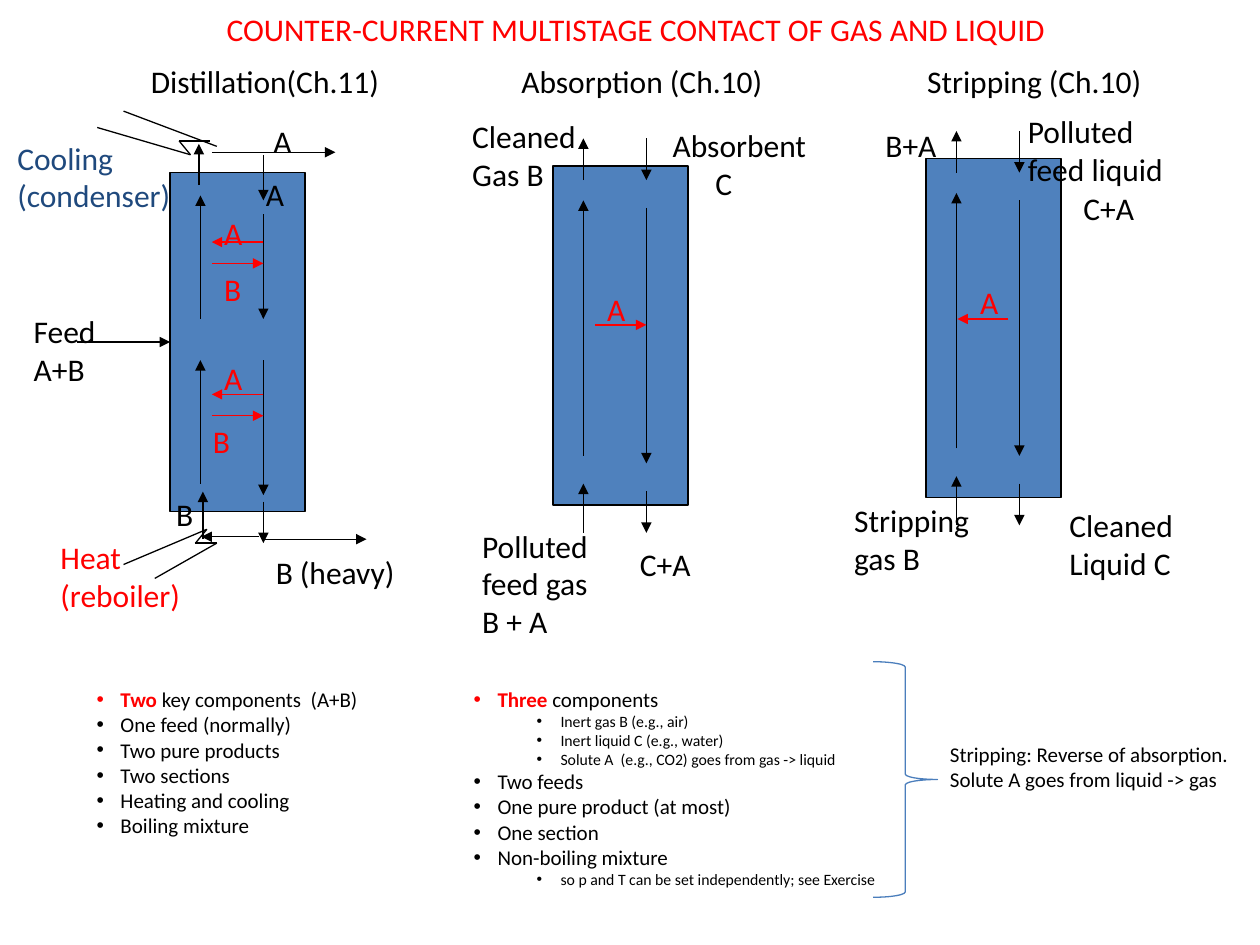
from dataclasses import dataclass

from lxml.etree import SubElement
from pptx import Presentation
from pptx.dml.color import RGBColor
from pptx.enum.shapes import MSO_CONNECTOR as Link, MSO_SHAPE as Preset
from pptx.enum.text import MSO_AUTO_SIZE as Fit
from pptx.oxml.ns import qn
from pptx.util import Cm, Pt


@dataclass(frozen=True)
class Theme:
    font: str = "Calibri"
    black: str = "000000"
    red: str = "FF0000"
    navy: str = "1F497D"
    column: str = "4F81BD"
    brace: str = "4B7EBC"
    label: int = 18
    note: int = 12
    detail: int = 9
    stroke: float = 0.75


THEME = Theme()
COLUMN_WIDTH, COLUMN_HEIGHT = 2.72, 6.83


class FlowPage:
    def __init__(self, page, theme):
        self.page = page
        self.theme = theme

    def span(self, para, text, size, color, bold=False):
        run = para.add_run()
        run.text = text
        run.font.name = self.theme.font
        run.font.size = Pt(size)
        run.font.bold = bold
        run.font.color.rgb = RGBColor.from_string(color)

    def frame(self, left, top, width, height):
        box = self.page.shapes.add_textbox(Cm(left), Cm(top), Cm(width), Cm(height))
        box.text_frame.word_wrap = False
        box.text_frame.auto_size = Fit.SHAPE_TO_FIT_TEXT
        return box.text_frame

    def paragraphs(self, frame, items):
        """Yield each item with its paragraph, using the frame's first one first."""
        for index, item in enumerate(items):
            yield item, frame.add_paragraph() if index else frame.paragraphs[0]

    def label(self, left, top, width, text, color=THEME.black, size=THEME.label, indent=0):
        """Place lines of text; indent moves the last line to the right."""
        lines = text.split("\n")
        line_height = 0.78 * size / self.theme.label
        frame = self.frame(left, top, width, 0.24 + line_height * len(lines))
        for line, para in self.paragraphs(frame, lines):
            self.span(para, line, size, color)
        if indent:
            para._p.get_or_add_pPr().set("marL", str(Cm(indent)))

    def bullets(self, left, top, width, height, items):
        """Each item is (level, red bold lead, text)."""
        frame = self.frame(left, top, width, height)
        for (level, lead, text), para in self.paragraphs(frame, items):
            para.level = level
            props = para._p.get_or_add_pPr()
            props.set("marL", str(Cm(0.48 + 1.27 * level)))
            props.set("indent", str(Cm(-0.48)))
            SubElement(props, qn("a:buFont")).set("typeface", "Arial")
            SubElement(props, qn("a:buChar")).set("char", "•")
            if lead:
                self.span(para, lead, self.theme.note, self.theme.red, bold=True)
            size = self.theme.detail if level else self.theme.note
            self.span(para, text, size, self.theme.black)

    def shape(self, preset, left, top, width, height, line, fill=None):
        shape = self.page.shapes.add_shape(preset, Cm(left), Cm(top), Cm(width), Cm(height))
        shape.shadow.inherit = False
        shape.line.color.rgb = RGBColor.from_string(line)
        shape.line.width = Pt(self.theme.stroke)
        if fill:
            shape.fill.solid()
            shape.fill.fore_color.rgb = RGBColor.from_string(fill)
        else:
            shape.fill.background()
        return shape

    def column(self, left, top):
        return self.shape(Preset.RECTANGLE, left, top, COLUMN_WIDTH, COLUMN_HEIGHT,
                          self.theme.black, self.theme.column)

    def line(self, x1, y1, x2, y2, color=THEME.black, owner=None):
        line = (owner or self.page).shapes.add_connector(
            Link.STRAIGHT, Cm(x1), Cm(y1), Cm(x2), Cm(y2))
        line.line.color.rgb = RGBColor.from_string(color)
        line.line.width = Pt(self.theme.stroke)
        SubElement(line._element.spPr, qn("a:effectLst"))
        return line

    def arrow(self, x1, y1, x2, y2, color=THEME.black):
        arrow = self.line(x1, y1, x2, y2, color)
        SubElement(arrow.line._get_or_add_ln(), qn("a:tailEnd")).set("type", "triangle")
        return arrow

    def heat_symbol(self, segments):
        group = self.page.shapes.add_group_shape()
        for segment in segments:
            self.line(*segment, owner=group)

    def single_section(self, left, top):
        """Column with gas rising on the left and liquid falling on the right."""
        self.column(left, top)
        gas, liquid = left + 0.61, left + 1.88
        for start, end in ((7.39, 6.4), (5.84, 0.69), (0.28, -0.56)):
            self.arrow(gas, top + start, gas, top + end)
        for start, end in ((0.84, 5.99), (6.55, 7.39), (-0.56, 0.28)):
            self.arrow(liquid, top + start, liquid, top + end)


def draw_distillation(flow):
    left, top = 3.43, 3.48
    flow.label(0.1, 2.67, 3.63, "Cooling\n(condenser)", THEME.navy)
    tower = flow.column(left, top)
    middle = top + COLUMN_HEIGHT / 2
    feed = flow.arrow(1.55, middle, left, middle)
    feed.end_connect(tower, 1)

    flow.heat_symbol([(2.49, 11.38, 4.17, 10.67), (4.17, 10.67, 3.94, 10.95),
                      (3.94, 10.95, 4.37, 10.95), (4.37, 10.95, 3.12, 11.66)])
    flow.heat_symbol([(1.96, 2.57, 3.84, 3.12), (3.84, 3.12, 3.61, 2.84),
                      (3.61, 2.84, 4.24, 2.84), (4.37, 2.95, 2.49, 2.24)])

    for x, start, end in ((5.31, 4.32, 6.43), (5.31, 7.26, 9.98), (4.04, 9.75, 7.26),
                          (4.04, 6.43, 3.94), (4.01, 3.73, 2.9), (5.31, 3.12, 4.04),
                          (5.31, 10.11, 10.95), (4.09, 10.87, 9.91)):
        flow.arrow(x, start, x, end)
    for y, start, end in ((3.07, 4.27, 6.76), (10.87, 5.31, 7.39), (10.82, 5.23, 4.06)):
        flow.arrow(start, y, end, y)
    for to_gas, to_liquid in ((4.88, 5.31), (7.95, 8.38)):
        flow.arrow(5.31, to_gas, 4.27, to_gas, THEME.red)
        flow.arrow(4.27, to_liquid, 5.31, to_liquid, THEME.red)

    for x, y, name in ((4.27, 4.19, "A"), (4.27, 5.31, "B"), (4.27, 7.11, "A"), (4.04, 8.38, "B")):
        flow.label(x, y, 0.97, name, THEME.red)
    for x, y, name in ((5.26, 2.34, "A"), (5.11, 3.4, "A"), (3.3, 9.86, "B")):
        flow.label(x, y, 0.89, name)
    flow.label(2.79, 1.12, 5.44, "Distillation(Ch.11)")
    flow.label(0.97, 10.72, 2.95, "Heat\n(reboiler)", THEME.red)
    flow.label(0.43, 6.17, 1.78, "Feed\nA+B")
    flow.label(5.31, 11.02, 2.95, "B (heavy)")


def draw_absorption(flow):
    flow.single_section(11.15, 3.35)
    flow.arrow(11.99, 6.55, 13.03, 6.55, THEME.red)
    flow.label(11.99, 5.72, 0.97, "A", THEME.red)
    flow.label(10.26, 1.12, 7.44, "Absorption (Ch.10)")
    flow.label(9.27, 2.24, 2.62, "Cleaned\nGas B")
    flow.label(13.31, 2.41, 3.23, "Absorbent\nC", indent=0.86)
    flow.label(9.47, 10.49, 2.67, "Polluted\nfeed gas\nB + A")
    flow.label(12.65, 10.87, 1.55, "C+A")


def draw_stripping(flow):
    flow.single_section(18.67, 3.2)
    flow.arrow(20.32, 6.43, 19.3, 6.43, THEME.red)
    flow.label(19.51, 5.59, 0.97, "A", THEME.red)
    flow.label(18.44, 1.12, 6.07, "Stripping (Ch.10)")
    flow.label(17.6, 2.41, 1.55, "B+A")
    flow.label(20.47, 2.13, 3.56, "Polluted\nfeed liquid")
    flow.label(21.59, 3.68, 1.55, "C+A")
    flow.label(16.97, 9.98, 2.84, "Stripping\ngas B")
    flow.label(21.31, 10.08, 2.77, "Cleaned\nLiquid C")


def draw_notes(flow):
    flow.bullets(1.7, 13.72, 5.84, 3.33, [
        (0, "Two ", "key components  (A+B)"),
        (0, "", "One feed (normally)"),
        (0, "", "Two pure products"),
        (0, "", "Two sections"),
        (0, "", "Heating and cooling"),
        (0, "", "Boiling mixture"),
    ])
    flow.bullets(9.3, 13.72, 8.69, 4.37, [
        (0, "Three ", "components"),
        (1, "", "Inert gas B (e.g., air)"),
        (1, "", "Inert liquid C (e.g., water)"),
        (1, "", "Solute A  (e.g., CO2) goes from gas -> liquid"),
        (0, "", "Two feeds"),
        (0, "", "One pure product (at most)"),
        (0, "", "One section"),
        (0, "", "Non-boiling mixture"),
        (1, "", "so p and T can be set independently; see Exercise"),
    ])
    flow.shape(Preset.RIGHT_BRACE, 17.6, 13.34, 1.3, 4.75, THEME.brace)
    flow.label(18.9, 14.83, 6.17,
               "Stripping: Reverse of absorption.\nSolute A goes from liquid -> gas", size=THEME.note)


def main():
    deck = Presentation()
    deck.slide_width, deck.slide_height = Cm(25.4), Cm(19.05)
    flow = FlowPage(deck.slides.add_slide(deck.slide_layouts[6]), THEME)
    flow.label(4.32, 0.08, 17.3, "COUNTER-CURRENT MULTISTAGE CONTACT OF GAS AND LIQUID", THEME.red)
    draw_distillation(flow)
    draw_absorption(flow)
    draw_stripping(flow)
    draw_notes(flow)
    deck.save("out.pptx")


if __name__ == "__main__":
    main()
